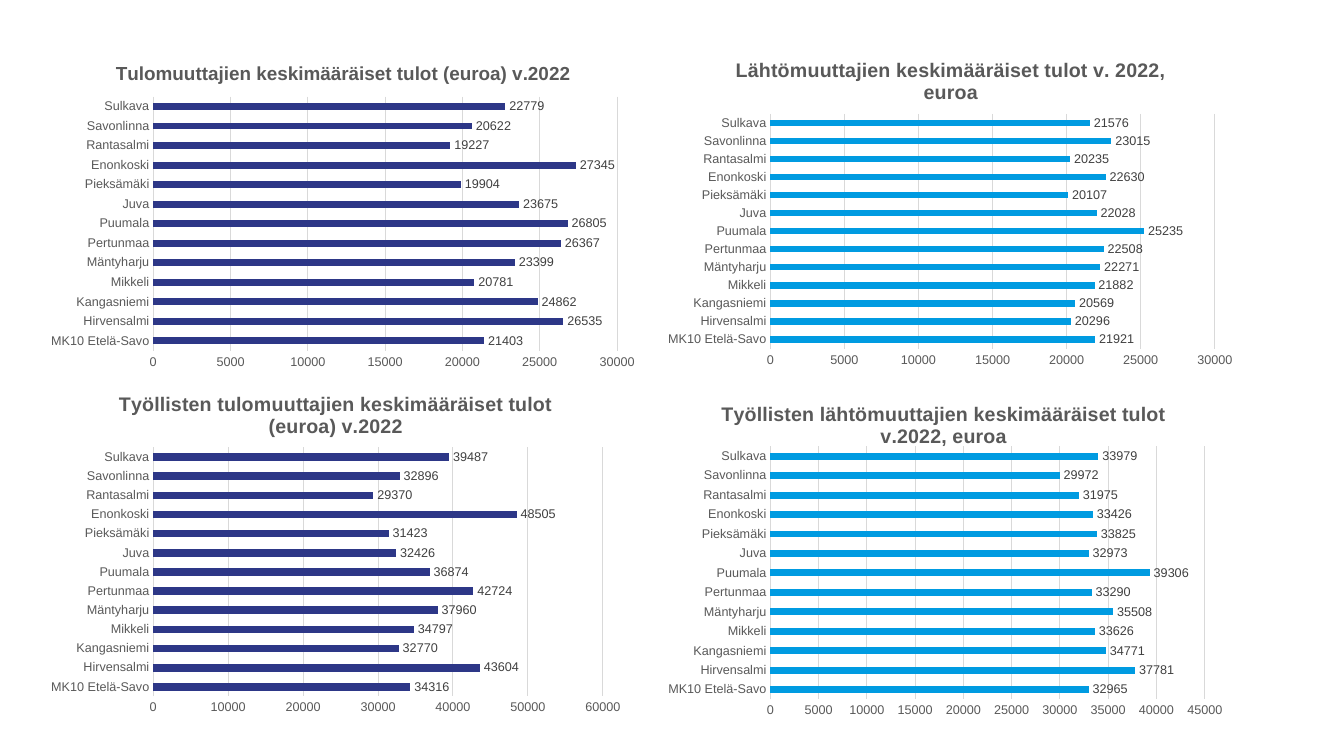
"""Builds a slide of four bar charts on the mean income of movers."""
import pptx
import pptx.chart.data
import pptx.dml.color
import pptx.enum.chart
import pptx.oxml
import pptx.oxml.ns
import pptx.util

Inches = pptx.util.Inches
Pt = pptx.util.Pt
ENUM = pptx.enum.chart
COLORS = {"navy": "2D3787", "sky": "009BE1", "text": "595959", "label": "404040",
          "grid": "D9D9D9", "black": "000000"}
TOWNS = ["MK10 Etelä-Savo", "Hirvensalmi", "Kangasniemi", "Mikkeli", "Mäntyharju",
         "Pertunmaa", "Puumala", "Juva", "Pieksämäki", "Enonkoski", "Rantasalmi",
         "Savonlinna", "Sulkava"]


class Deck:
    def __init__(self):
        self.prs = pptx.Presentation()
        self.prs.slide_width = Inches(13.33)
        self.prs.slide_height = Inches(7.5)
        self.slide = self.prs.slides.add_slide(self.prs.slide_layouts[6])
        self.face = "Arial"

    def color(self, name):
        return pptx.dml.color.RGBColor.from_string(COLORS[name])

    def font(self, font, size, name, bold=False):
        font.name = self.face
        font.size = Pt(size)
        font.bold = bold
        font.color.rgb = self.color(name)

    def line(self, line):
        line.color.rgb = self.color("grid")
        line.width = Pt(0.75)

    def title(self, chart, text, size):
        chart.has_title = True
        chart.chart_title.include_in_layout = False
        run = chart.chart_title.text_frame.paragraphs[0].add_run()
        run.text = text
        self.font(run.font, size, "text", True)

    def axes(self, chart, top, step):
        for axis in (chart.category_axis, chart.value_axis):
            axis.major_tick_mark = ENUM.XL_TICK_MARK.NONE
            axis.minor_tick_mark = ENUM.XL_TICK_MARK.NONE
            self.font(axis.tick_labels.font, 9, "text")
        chart.category_axis.has_major_gridlines = False
        self.line(chart.category_axis.format.line)
        value = chart.value_axis
        value.minimum_scale, value.maximum_scale, value.major_unit = 0, top, step
        value.format.line.fill.background()
        value.has_major_gridlines = True
        self.line(value.major_gridlines.format.line)
        value.tick_labels.number_format = "0"
        value.tick_labels.number_format_is_linked = False

    def bars(self, chart, fill, gap):
        plot = chart.plots[0]
        plot.gap_width = gap
        plot.vary_by_categories = False
        shape = plot.series[0].format
        shape.fill.solid()
        shape.fill.fore_color.rgb = self.color(fill)
        plot.has_data_labels = True
        labels = plot.data_labels
        labels.show_value = True
        labels.number_format = "0"
        labels.number_format_is_linked = False
        labels.position = ENUM.XL_LABEL_POSITION.OUTSIDE_END
        self.font(labels.font, 9, "label")

    def frame(self, chart, box, inner):
        left, top, width, height = box
        parts = {"x": (inner[0] - left) / width, "y": (inner[1] - top) / height,
                 "w": inner[2] / width, "h": inner[3] / height}
        modes = "".join(f'<c:{key}Mode val="edge"/>' for key in "xy")
        sizes = "".join(f'<c:{key} val="{part:.4f}"/>' for key, part in parts.items())
        layout = pptx.oxml.parse_xml(
            f'<c:layout {pptx.oxml.ns.nsdecls("c")}><c:manualLayout>'
            f'<c:layoutTarget val="inner"/>{modes}{sizes}</c:manualLayout></c:layout>')
        area = chart.element.chart.plotArea
        for old in area.findall(pptx.oxml.ns.qn("c:layout")):
            area.remove(old)
        area.insert(0, layout)

    def chart(self, text, box, inner, fill, gap, top, step, values, size=14):
        data = pptx.chart.data.CategoryChartData(number_format="0")
        data.categories = TOWNS
        data.add_series("Series 1", values)
        chart = self.slide.shapes.add_chart(
            ENUM.XL_CHART_TYPE.BAR_CLUSTERED, *map(Inches, box), data).chart
        self.font(chart.font, 10, "black")
        chart.has_legend = False
        self.title(chart, text, size)
        self.axes(chart, top, step)
        self.bars(chart, fill, gap)
        self.frame(chart, box, inner)


def main():
    deck = Deck()
    deck.chart("Tulomuuttajien keskimääräiset tulot (euroa) v.2022",
               (0.39, 0.46, 6.03, 3.27), (1.52, 0.96, 4.6, 2.52), "navy", 182, 30000, 5000,
               [21403, 26535, 24862, 20781, 23399, 26367, 26805, 23675, 19904, 27345,
                19227, 20622, 22779], size=13.5)
    deck.chart("Työllisten tulomuuttajien keskimääräiset tulot (euroa) v.2022",
               (0.39, 3.72, 5.88, 3.46), (1.52, 4.44, 4.46, 2.47), "navy", 150, 60000, 10000,
               [34316, 43604, 32770, 34797, 37960, 42724, 36874, 32426, 31423, 48505,
                29370, 32896, 39487])
    deck.chart("Lähtömuuttajien keskimääräiset tulot v. 2022, euroa",
               (6.52, 0.41, 5.82, 3.31), (7.64, 1.13, 4.41, 2.33), "sky", 182, 30000, 5000,
               [21921, 20296, 20569, 21882, 22271, 22508, 25235, 22028, 20107, 22630,
                20235, 23015, 21576])
    deck.chart("Työllisten lähtömuuttajien keskimääräiset tulot v.2022, euroa",
               (6.52, 3.83, 5.68, 3.38), (7.64, 4.43, 4.31, 2.51), "sky", 182, 45000, 5000,
               [32965, 37781, 34771, 33626, 35508, 33290, 39306, 32973, 33825, 33426,
                31975, 29972, 33979])
    deck.prs.save("out.pptx")


if __name__ == "__main__":
    main()
